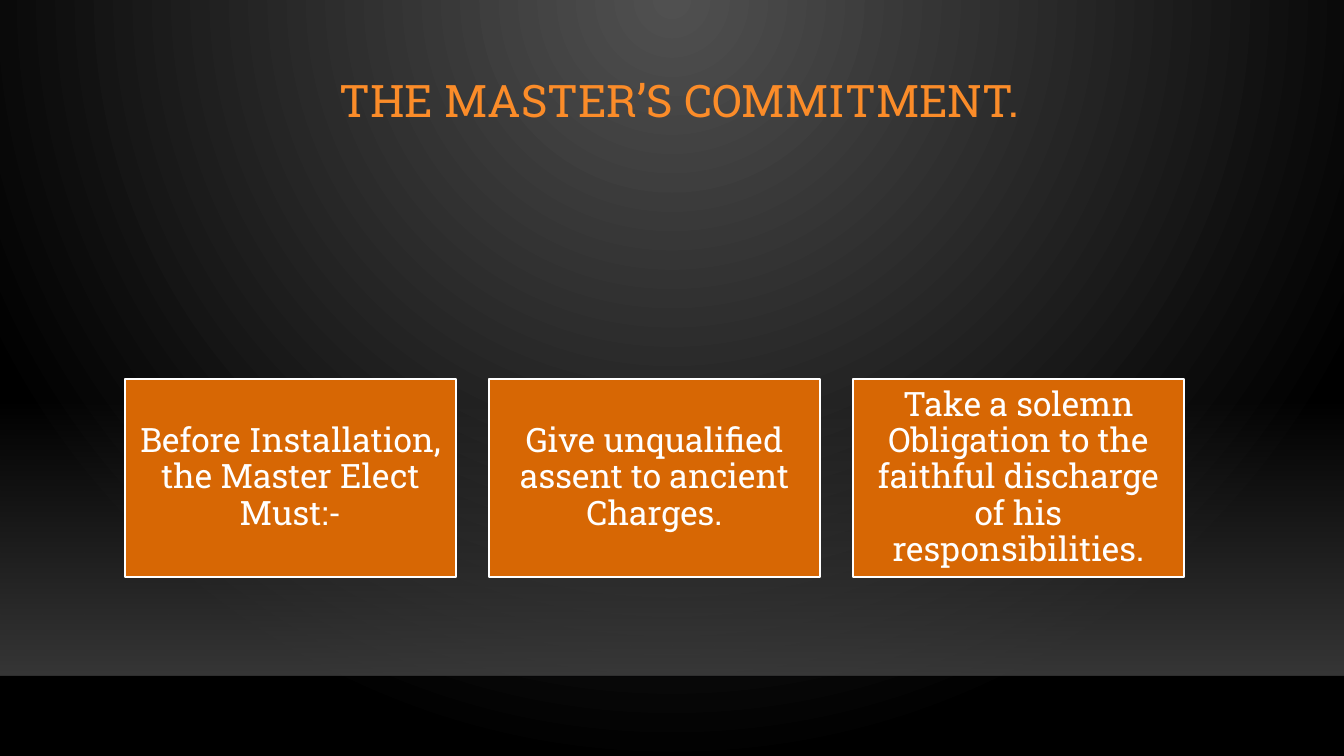
from pptx import Presentation
from pptx.dml.color import RGBColor
from pptx.enum.shapes import MSO_CONNECTOR, MSO_SHAPE
from pptx.enum.text import MSO_ANCHOR, PP_ALIGN
from pptx.oxml.ns import qn
from pptx.util import Emu, Pt
from lxml.etree import SubElement

TITLE = "THE MASTER’S COMMITMENT."
CARDS = [
    "Before Installation, the Master Elect Must:-",
    "Give unqualified assent to ancient Charges.",
    "Take a solemn Obligation to the faithful discharge of his responsibilities.",
]
COLORS = {"glow": "505050", "edge": "000000", "floor": "454545", "rim": "000001",
          "title": "FB8C29", "card": "D76704", "white": "FFFFFF"}
FONT = "Roboto Slab"
SLIDE_W, SLIDE_H = 1344, 756
FLOOR_TOP, FLOOR_BOTTOM = 399, 676
TITLE_BOX = (168, 45, 1024, 116)
CARD_X, CARD_Y, CARD_W, CARD_H, CARD_GAP = 125, 379, 331, 198, 33


def px(n):
    return Emu(round(n * 914400 / 100.8))


def rgb(name):
    return RGBColor.from_string(COLORS[name])


def set_alpha(color, percent):
    SubElement(color, qn("a:alpha"), val=str(percent * 1000))


def set_gradient(fill, first, last):
    fill.gradient()
    for stop, name, position in zip(fill.gradient_stops, (first, last), (0, 1)):
        stop.color.rgb = rgb(name)
        stop.position = position


def set_text(shape, text, size, color, inset):
    tf = shape.text_frame
    tf.word_wrap = True
    tf.vertical_anchor = MSO_ANCHOR.MIDDLE
    tf.margin_left = tf.margin_right = px(10)
    tf.margin_top = tf.margin_bottom = px(inset)
    p = tf.paragraphs[0]
    p.text = text
    p.alignment = PP_ALIGN.CENTER
    p.line_spacing = 0.9
    p.font.name, p.font.size = FONT, Pt(size)
    p.font.color.rgb = rgb(color)


def add_background(s):
    set_gradient(s.background.fill, "glow", "edge")
    grad = next(s.element.iter(qn("a:gradFill")))
    grad.remove(grad.find(qn("a:lin")))
    path = SubElement(grad, qn("a:path"), attrib={"path": "circle"})
    SubElement(path, qn("a:fillToRect"), l="43000", t="0", r="43000", b="100000")


def add_floor(s):
    floor = s.shapes.add_shape(MSO_SHAPE.RECTANGLE, 0, px(FLOOR_TOP),
                               px(SLIDE_W), px(FLOOR_BOTTOM - FLOOR_TOP))
    floor.shadow.inherit = False
    floor.line.fill.background()
    set_gradient(floor.fill, "floor", "floor")
    floor.fill.gradient_angle = 270
    grad = next(floor.element.iter(qn("a:gradFill")))
    for color, percent in zip(grad.iter(qn("a:srgbClr")), (0, 80)):
        set_alpha(color, percent)

    rim = s.shapes.add_connector(MSO_CONNECTOR.STRAIGHT, 0, px(FLOOR_BOTTOM),
                                 px(SLIDE_W), px(FLOOR_BOTTOM))
    rim.line.width = Pt(1)
    rim.line.color.rgb = rgb("rim")
    set_alpha(next(rim.element.iter(qn("a:srgbClr"))), 20)
    SubElement(rim.element.spPr, qn("a:effectLst"))


def add_card(s, i, text):
    card = s.shapes.add_shape(MSO_SHAPE.RECTANGLE, px(CARD_X + i * (CARD_W + CARD_GAP)),
                              px(CARD_Y), px(CARD_W), px(CARD_H))
    card.shadow.inherit = False
    card.fill.solid()
    card.fill.fore_color.rgb = rgb("card")
    card.line.color.rgb = rgb("white")
    card.line.width = Pt(1.25)
    set_text(card, text, 24, "white", 10)


def main():
    """Build the slide on the Master's commitment."""
    prs = Presentation()
    prs.slide_width, prs.slide_height = px(SLIDE_W), px(SLIDE_H)
    s = prs.slides.add_slide(prs.slide_layouts[6])
    add_background(s)
    add_floor(s)
    title = s.shapes.add_textbox(*map(px, TITLE_BOX))
    set_text(title, TITLE, 32, "title", 5)
    for i, text in enumerate(CARDS):
        add_card(s, i, text)
    prs.save("out.pptx")


if __name__ == "__main__":
    main()
